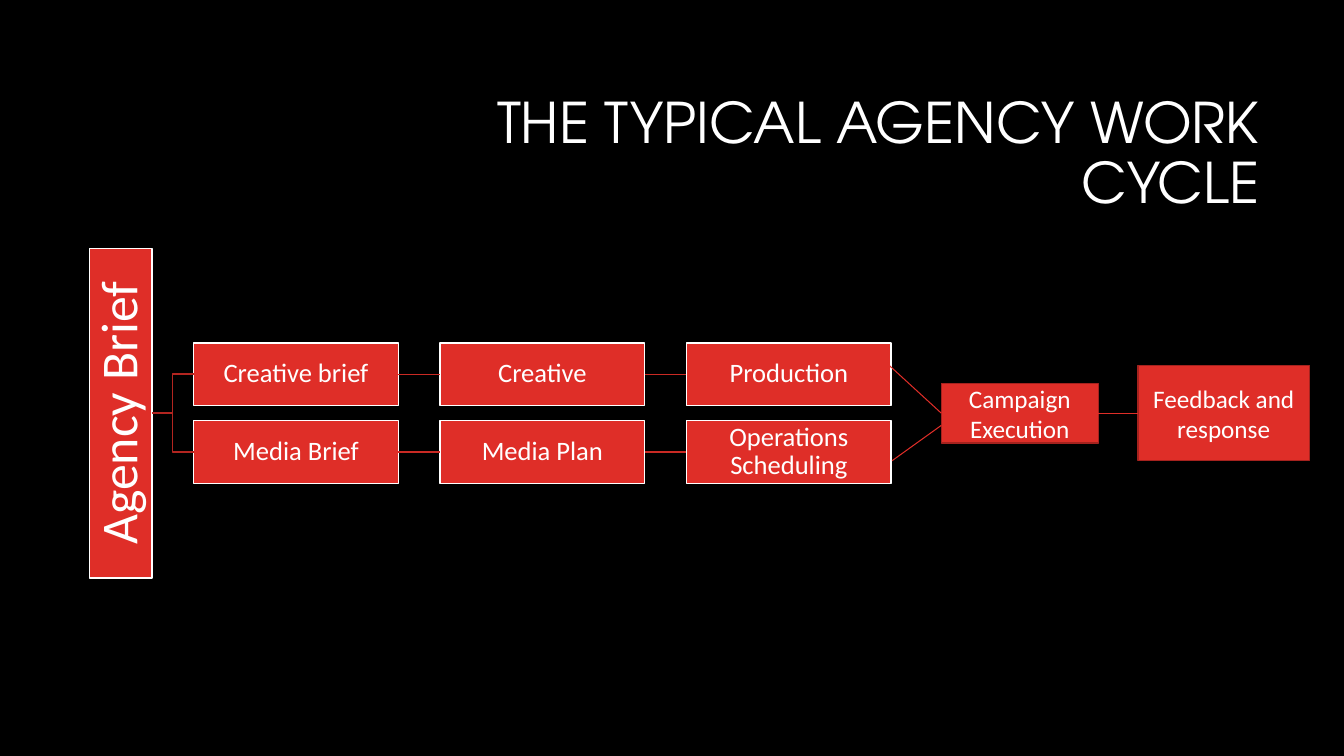
from lxml.etree import SubElement
from pptx import Presentation
from pptx.dml.color import RGBColor
from pptx.enum.shapes import MSO_CONNECTOR, MSO_SHAPE
from pptx.enum.text import MSO_ANCHOR, PP_ALIGN
from pptx.oxml.ns import qn
from pptx.util import Cm, Pt

WHITE, BLACK, RED = "FFFFFF", "000000", "DF2E28"
ELBOW_RED, ROW_RED, DARK_RED = "B32520", "CA2A24", "A5221E"

TRACKS = [
    ["Creative brief", "Creative", "Production"],
    ["Media Brief", "Media Plan", "Operations Scheduling"],
]
LEFT, RIGHT = 1, 3  # connection sites of a rectangle


def color(hex_string):
    return RGBColor.from_string(hex_string)


def write(shape, text, size, font="Calibri", align=PP_ALIGN.CENTER,
          spacing=0.9, inset_x=0.03, inset_y=0.03):
    frame = shape.text_frame
    frame.word_wrap = True
    frame.vertical_anchor = MSO_ANCHOR.MIDDLE
    frame.margin_left = frame.margin_right = Cm(inset_x)
    frame.margin_top = frame.margin_bottom = Cm(inset_y)
    paragraph = frame.paragraphs[0]
    paragraph.alignment = align
    paragraph.line_spacing = spacing
    run = paragraph.add_run()
    run.text = text
    run.font.name = font
    run.font.size = Pt(size)
    run.font.color.rgb = color(WHITE)


def add_box(slide, left, top, width, height, text, size, outline=WHITE, **text_format):
    box = slide.shapes.add_shape(
        MSO_SHAPE.RECTANGLE, Cm(left), Cm(top), Cm(width), Cm(height))
    box.shadow.inherit = False
    box.fill.solid()
    box.fill.fore_color.rgb = color(RED)
    box.line.color.rgb = color(outline)
    box.line.width = Pt(1)
    write(box, text, size, **text_format)
    return box


def add_link(slide, start, end, line_color, width=1, kind=MSO_CONNECTOR.STRAIGHT):
    """Draw a connector; each end is an (x, y) point in cm or a (box, site) pair."""
    link = slide.shapes.add_connector(kind, 0, 0, 0, 0)
    if isinstance(start[0], (int, float)):
        link.begin_x, link.begin_y = Cm(start[0]), Cm(start[1])
    else:
        link.begin_connect(*start)
    if isinstance(end[0], (int, float)):
        link.end_x, link.end_y = Cm(end[0]), Cm(end[1])
    else:
        link.end_connect(*end)
    link.line.color.rgb = color(line_color)
    link.line.width = Pt(width)
    SubElement(link._element.spPr, qn("a:effectLst"))


def add_title(slide, left, top, width, height):
    title = slide.shapes.add_textbox(Cm(left), Cm(top), Cm(width), Cm(height))
    write(title, "THE TYPICAL AGENCY WORK CYCLE", 40, font="TeX Gyre Adventor",
          align=PP_ALIGN.RIGHT, inset_x=0.25, inset_y=0.13)


def add_tracks(slide, left, top, height):
    """Place the upright agency brief and the two rows that branch from it."""
    bar, box_width, gap, row_gap = 1.58, 5.16, 1.05, 0.38
    middle = top + height / 2
    # The bar is laid flat around its centre, then turned upright.
    brief = add_box(slide, left + (bar - height) / 2, middle - bar / 2,
                    height, bar, "Agency Brief", 37, inset_x=0.08, inset_y=0.08)
    brief.rotation = 270

    first_left = left + bar + gap
    first_top = middle - bar - row_gap / 2
    for row, labels in enumerate(TRACKS):
        boxes = [
            add_box(slide, first_left + column * (box_width + gap),
                    first_top + row * (bar + row_gap), box_width, bar, label, 19)
            for column, label in enumerate(labels)
        ]
        add_link(slide, (left + bar, middle), (boxes[0], LEFT), ELBOW_RED,
                 kind=MSO_CONNECTOR.ELBOW)
        for box, following in zip(boxes, boxes[1:]):
            add_link(slide, (box, RIGHT), (following, LEFT), ROW_RED)


def add_outcome(slide, left, middle):
    """Place the closing steps, centred on the height of the tracks."""
    execution = add_box(slide, left, middle - 0.75, 3.96, 1.5, "Campaign Execution", 18,
                        outline=DARK_RED, spacing=1, inset_x=0.25, inset_y=0.13)
    feedback = add_box(slide, left + 4.96, middle - 1.2, 4.32, 2.4,
                       "Feedback and response", 18,
                       outline=DARK_RED, spacing=1, inset_x=0.25, inset_y=0.13)
    add_link(slide, (left - 1.32, middle - 1.21), (execution, LEFT), RED, width=0.75)
    add_link(slide, (left - 1.24, middle + 1.2), (left, middle + 0.31), RED, width=0.75)
    add_link(slide, (execution, RIGHT), (feedback, LEFT), RED, width=0.75)


def main():
    presentation = Presentation()
    presentation.slide_width, presentation.slide_height = Cm(33.87), Cm(19.05)
    slide = presentation.slides.add_slide(presentation.slide_layouts[6])
    slide.background.fill.solid()
    slide.background.fill.fore_color.rgb = color(BLACK)
    add_title(slide, 8.05, 2.13, 23.93, 3.58)
    add_tracks(slide, 2.25, 6.26, 8.3)
    add_outcome(slide, 23.72, 10.41)
    presentation.save("out.pptx")


if __name__ == "__main__":
    main()
